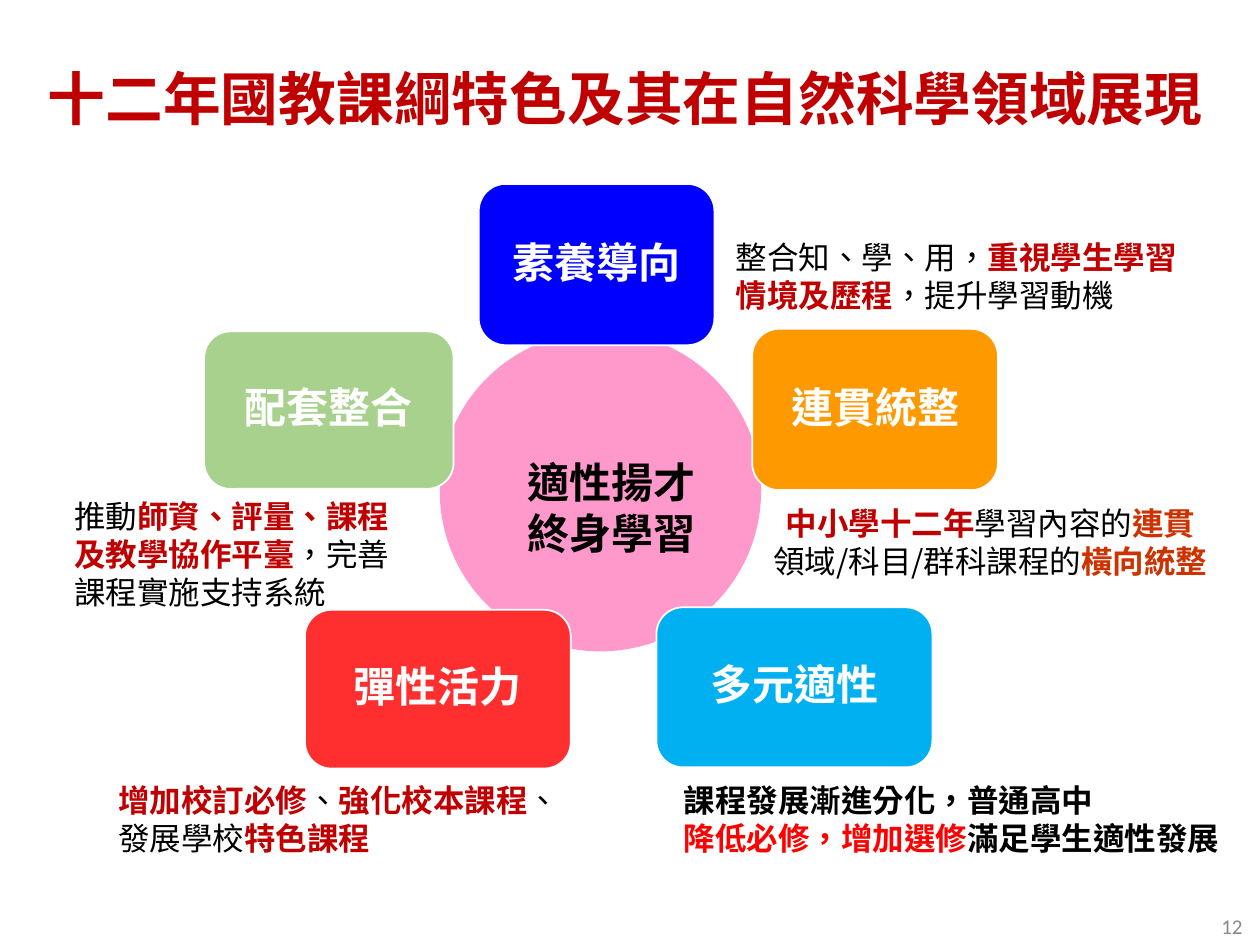
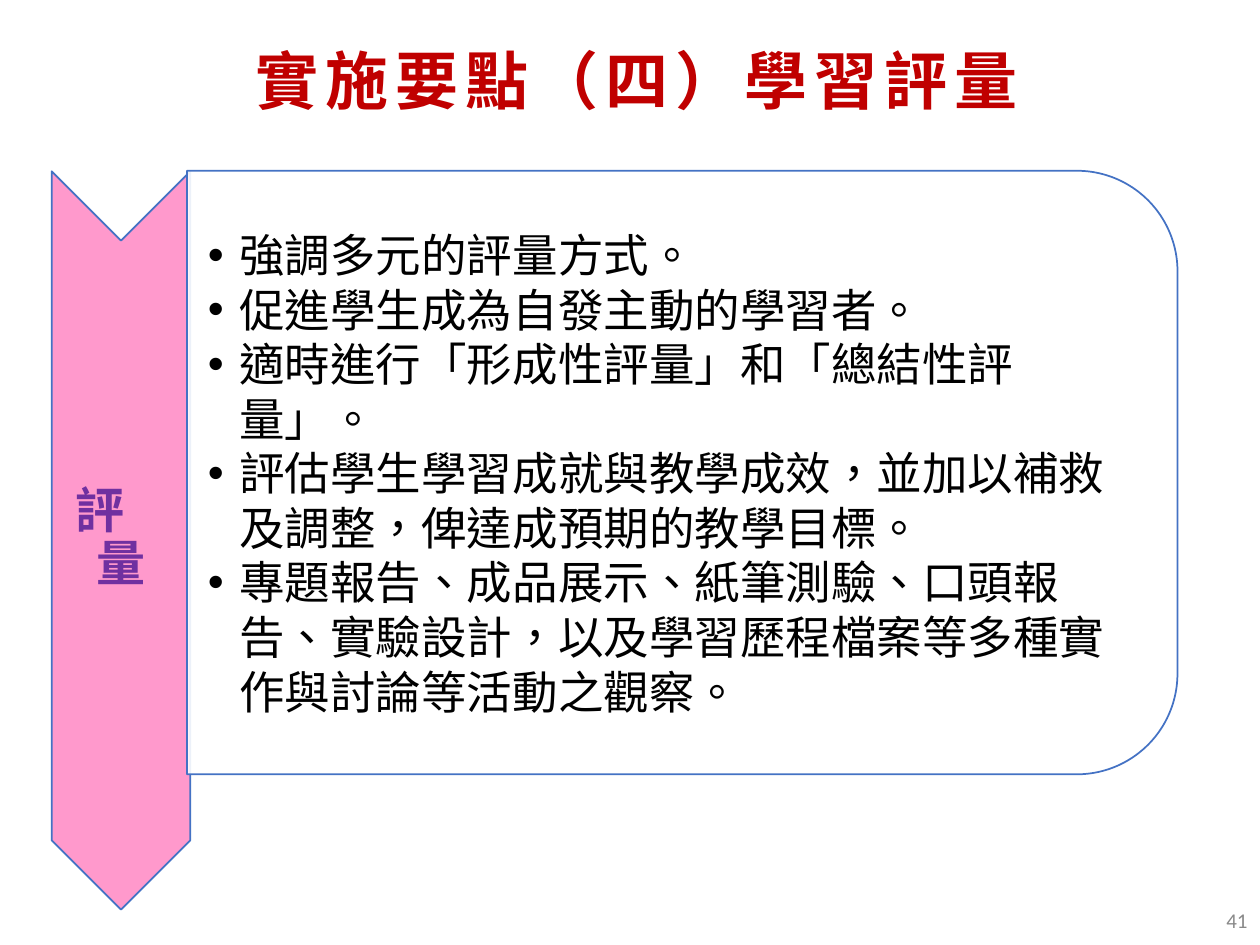
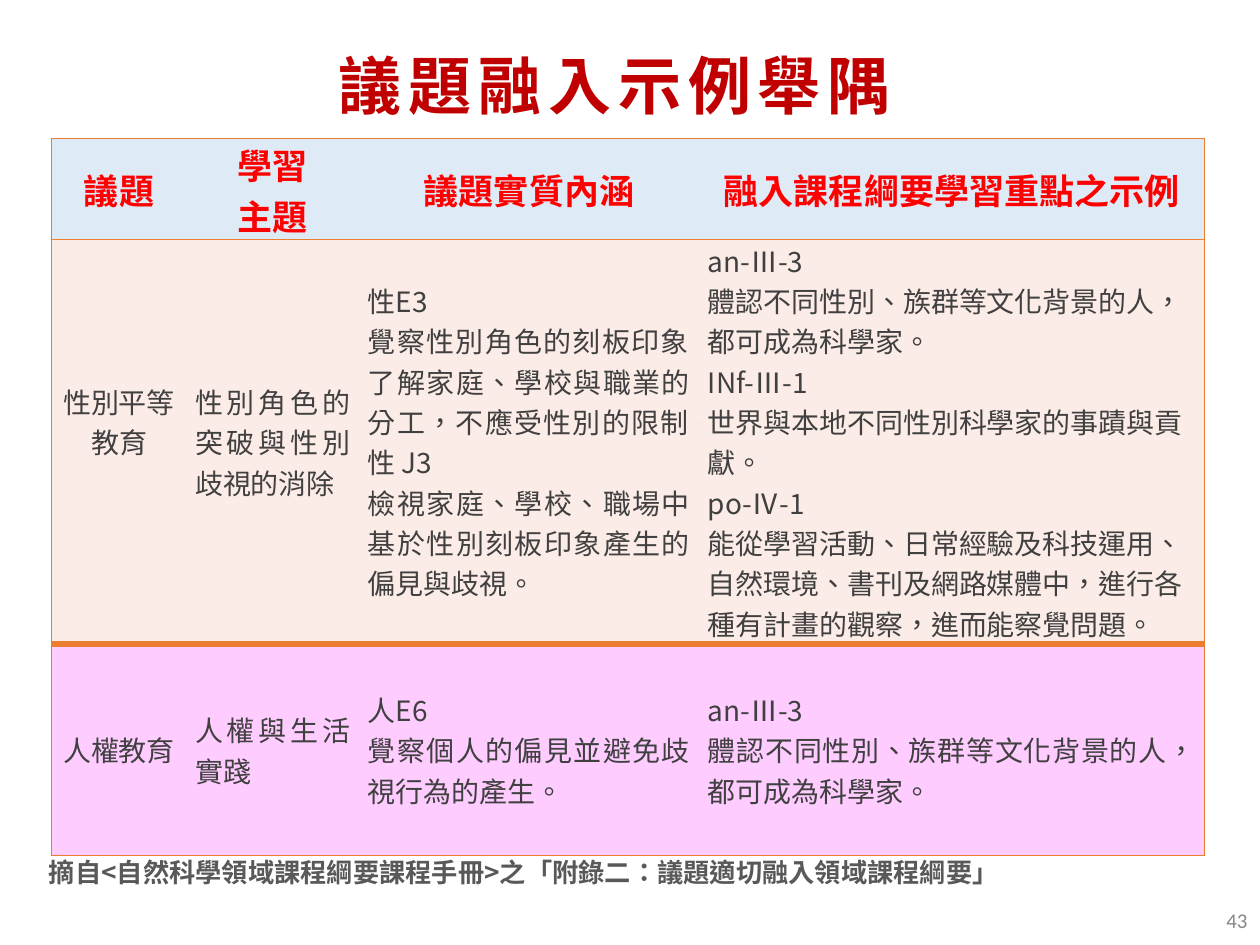
from lxml import etree
from pptx import Presentation
from pptx.dml.color import RGBColor
from pptx.enum import shapes, text
from pptx.oxml import ns
from pptx.util import Inches, Pt

FONT = "Noto Sans CJK SC"
RED, PINK, BLUE, ORANGE = "C00000", "FF99CC", "4472C4", "ED7D31"
LEFT, MID, RIGHT, JUST = (text.PP_ALIGN.LEFT, text.PP_ALIGN.CENTER,
                          text.PP_ALIGN.RIGHT, text.PP_ALIGN.JUSTIFY)
TIGHT = 0.9  # line spacing inside the diagram shapes

# Run styles: colour, bold
STYLES = {"plain": ("000000", False), "bold": ("000000", True),
          "key": (RED, True), "rust": ("CC3300", True), "hot": ("FF0000", True),
          "white": ("FFFFFF", True), "plum": ("7030A0", True),
          "page": ("898989", False), "cell": ("404040", False),
          "source": ("595959", True)}

# Slide 1 content
NODES = [("素養導向", "0000FF", (3.8, 1.46, 1.87, 1.28)),
         ("配套整合", "A9D18E", (1.62, 2.63, 1.98, 1.25)),
         ("連貫統整", "FF9900", (5.97, 2.61, 1.95, 1.28)),
         ("多元適性", "00B0F0", (5.21, 4.82, 2.19, 1.27)),
         ("彈性活力", "FF2F2F", (2.42, 4.84, 2.11, 1.26))]
NOTES = [
    ((5.74, 1.77, 3.9, 0.84), LEFT, [
        [("整合知、學、用，", "plain"), ("重視學生學習", "key")],
        [("情境及歷程", "key"), ("，提升學習動機", "plain")]]),
    ((5.81, 3.97, 4.1, 0.66), MID, [
        [("中小學十二年", "key"), ("學習內容的", "plain"), ("連貫", "rust")],
        [("領域/科目/群科課程的", "plain"), ("橫向統整", "rust")]]),
    ((5.33, 6.25, 4.6, 0.5), LEFT, [
        [("課程發展漸進分化，普通高中", "bold")],
        [("降低必修，增加選修", "hot"), ("滿足學生適性發展", "bold")]]),
    ((0.84, 6.21, 3.9, 0.58), LEFT, [
        [("增加校訂必修", "key"), ("、", "plain"),
         ("強化校本課程", "key"), ("、", "plain")],
        [("發展學校", "plain"), ("特色課程", "key")]]),
    ((0.49, 4.12, 2.9, 0.55), LEFT, [
        [("推動", "plain"), ("師資、評量、課程", "key")],
        [("及教學協作平臺", "key"), ("，完善", "plain")],
        [("課程實施支持系統", "plain")]])]

# Slide 2 content
POINTS = ["強調多元的評量方式。",
          "促進學生成為自發主動的學習者。",
          "適時進行「形成性評量」和「總結性評量」。",
          "評估學生學習成就與教學成效，並加以補救及調整，俾達成預期的教學目標。",
          "專題報告、成品展示、紙筆測驗、口頭報告、實驗設計，"
          "以及學習歷程檔案等多種實作與討論等活動之觀察。"]

# Slide 3 content
COLS, ROWS = [1.07, 1.37, 2.7, 4.01], [0.8, 3.21, 1.68]
FILLS = ["DEEBF7", "FCECE8", "FFCCFF"]
RULES = [1, 1, 4, 1]  # widths of the horizontal rules, top to bottom
ALIGNS = [[MID] * 4, [MID, JUST, JUST, LEFT], [MID, JUST, JUST, JUST]]
CELLS = [
    [["議題"], ["學習", "主題"], ["議題實質內涵"], ["融入課程綱要學習重點之示例"]],
    [["性別平等教育"],
     ["性別角色的突破與性別歧視的消除"],
     ["性E3",
      "覺察性別角色的刻板印象，了解家庭、學校與職業的分工，不應受性別的限制。",
      "性 J3",
      "檢視家庭、學校、職場中基於性別刻板印象產生的偏見與歧視。"],
     ["an-Ⅲ-3",
      "體認不同性別、族群等文化背景的人，都可成為科學家。",
      "INf-Ⅲ-1",
      "世界與本地不同性別科學家的事蹟與貢獻。",
      "po-Ⅳ-1",
      "能從學習活動、日常經驗及科技運用、自然環境、書刊及網路媒體中，"
      "進行各種有計畫的觀察，進而能察覺問題。"]],
    [["人權教育"],
     ["人權與生活實踐"],
     ["人E6", "覺察個人的偏見並避免歧視行為的產生。"],
     ["an-Ⅲ-3", "體認不同性別、族群等文化背景的人，都可成為科學家。"]]]
SOURCE = "摘自<自然科學領域課程綱要課程手冊>之「附錄二：議題適切融入領域課程綱要」"


def rgb(code):
    return RGBColor.from_string(code)


def sub(node, tag, **attrs):
    return etree.SubElement(node, ns.qn(tag), attrs)


def one(lines, style):
    """Give every line a single run of one style."""
    return [[(line, style)] for line in lines]


def put(frame, paras, size, align=LEFT, gap=1.0, font=FONT, spc=0):
    for i, runs in enumerate(paras):
        para = frame.add_paragraph() if i else frame.paragraphs[0]
        para.alignment = align
        para.line_spacing = gap
        for words, style in runs:
            run = para.add_run()
            run.text = words
            code, bold = STYLES[style]
            run.font.size, run.font.bold, run.font.name = Pt(size), bold, font
            run.font.color.rgb = rgb(code)
            props = run.font._element
            props.set("lang", "zh-TW")
            if spc:
                props.set("spc", str(spc * 100))
            sub(props, "a:ea", typeface=font)


def label(slide, box, paras, size, top=False, pad=None, **opts):
    frame = slide.shapes.add_textbox(*map(Inches, box)).text_frame
    frame.word_wrap = True
    frame.vertical_anchor = text.MSO_ANCHOR.TOP if top else text.MSO_ANCHOR.MIDDLE
    if pad:
        (frame.margin_left, frame.margin_top,
         frame.margin_right, frame.margin_bottom) = map(Inches, pad)
    put(frame, paras, size, **opts)
    return frame


def block(slide, kind, box, fill, line=None, turn=0):
    shape = slide.shapes.add_shape(kind, *map(Inches, box))
    shape.shadow.inherit = False
    shape.rotation = turn
    shape.fill.solid()
    shape.fill.fore_color.rgb = rgb(fill)
    if line:
        shape.line.color.rgb, shape.line.width = rgb(line), Pt(1)
    else:
        shape.line.fill.background()
    return shape


def title(slide, box, words):
    label(slide, box, one([words], "key"), 36, align=MID, spc=4)


def page(slide, num, box=(7.75, 7.1, 2.25, 0.4)):
    label(slide, box, one([num], "page"), 12, align=RIGHT, font="Calibri")


def edge(cell, sides):
    """Draw cell borders; sides is a list of (tag, points) in L, R, T, B order."""
    props = cell._tc.get_or_add_tcPr()
    for i, (tag, width) in enumerate(sides):
        line = etree.Element(ns.qn(tag), w=str(Pt(width)))
        sub(sub(line, "a:solidFill"), "a:srgbClr", val=ORANGE)
        props.insert(i, line)


def features(slide):
    page(slide, "12", (8.21, 7.2, 1.75, 0.3))
    block(slide, shapes.MSO_SHAPE.OVAL, (3.49, 2.63, 2.55, 2.54), PINK)
    label(slide, (3.97, 3.58, 1.77, 0.89),
          one(["適性揚才", "終身學習"], "bold"), 24, align=MID)
    for box, align, paras in NOTES:
        label(slide, box, paras, 18, align=align)
    for name, fill, box in NODES:
        node = block(slide, shapes.MSO_SHAPE.ROUNDED_RECTANGLE, box, fill, "FFFFFF")
        put(node.text_frame, one([name], "white"), 24, align=MID, gap=TIGHT)
    label(slide, (0.28, 0.45, 9.4, 0.66),
          one(["十二年國教課綱特色及其在自然科學領域展現"], "key"), 33, top=True)


def review(slide):
    title(slide, (0.49, 0.19, 9.13, 0.88), "實施要點（四）學習評量")
    block(slide, shapes.MSO_SHAPE.CHEVRON, (-1.97, 3.74, 5.86, 1.1), PINK, BLUE, 90)
    side = label(slide, (0.41, 1.9, 1.1, 4.76), one("評量", "plum"), 28,
                 pad=[0.02] * 4, gap=TIGHT)
    for para, inset in zip(side.paragraphs, (0.17, 0.34)):  # stepped letters
        para._p.get_or_add_pPr().set("marL", str(Inches(inset)))
    panel = block(slide, shapes.MSO_SHAPE.ROUND_2_SAME_RECTANGLE,
                  (3.02, -0.18, 4.79, 7.86), "FFFFFF", BLUE, 90)
    sub(panel.fill._xPr.find(".//" + ns.qn("a:srgbClr")), "a:alpha", val="90000")
    body = label(slide, (1.49, 1.59, 7.62, 4.32), one(POINTS, "plain"), 26,
                 pad=(0.16, 0.01, 0.01, 0.01))
    for para in body.paragraphs:
        props = para._p.get_or_add_pPr()
        props.set("marL", str(Inches(0.25)))
        props.set("indent", str(-Inches(0.25)))
        props.set("hangingPunct", "0")
        sub(props, "a:buFont", typeface="Arial")
        sub(props, "a:buChar", char="•")
    page(slide, "41")


def issues(slide):
    title(slide, (0.57, 0.24, 8.62, 0.86), "議題融入示例舉隅")
    box = map(Inches, (0.41, 1.1, sum(COLS), sum(ROWS)))
    frame = slide.shapes.add_table(len(ROWS), len(COLS), *box)
    table = frame.table
    # Plain table style without a grid
    table._tbl.tblPr.find(ns.qn("a:tableStyleId")).text = \
        "{2D5ABB26-0587-4C30-8999-92F81FD0307C}"
    for col, width in zip(table.columns, COLS):
        col.width = Inches(width)
    for r, height in enumerate(ROWS):
        table.rows[r].height = Inches(height)
        for c, lines in enumerate(CELLS[r]):
            cell = table.cell(r, c)
            cell.margin_left = cell.margin_right = Inches(0.07)
            cell.margin_top = cell.margin_bottom = 0
            cell.vertical_anchor = text.MSO_ANCHOR.MIDDLE
            cell.fill.solid()
            cell.fill.fore_color.rgb = rgb(FILLS[r])
            put(cell.text_frame, one(lines, "cell" if r else "hot"),
                16 if r else 20, align=ALIGNS[r][c])
            sides = [("a:lnT", RULES[r]), ("a:lnB", RULES[r + 1])]
            if c == 0:
                sides.insert(0, ("a:lnL", 1))
            elif c == len(COLS) - 1:
                sides.insert(0, ("a:lnR", 1))
            edge(cell, sides)
    table.cell(1, 0).margin_bottom = Inches(0.32)  # sits one line higher
    label(slide, (0.29, 6.75, 7.88, 0.35), one([SOURCE], "source"), 15, top=True)
    page(slide, "43")


def main():
    deck = Presentation()
    deck.slide_width, deck.slide_height = Inches(10), Inches(7.5)
    for build in (features, review, issues):
        build(deck.slides.add_slide(deck.slide_layouts[6]))
    deck.save("out.pptx")


if __name__ == "__main__":
    main()
